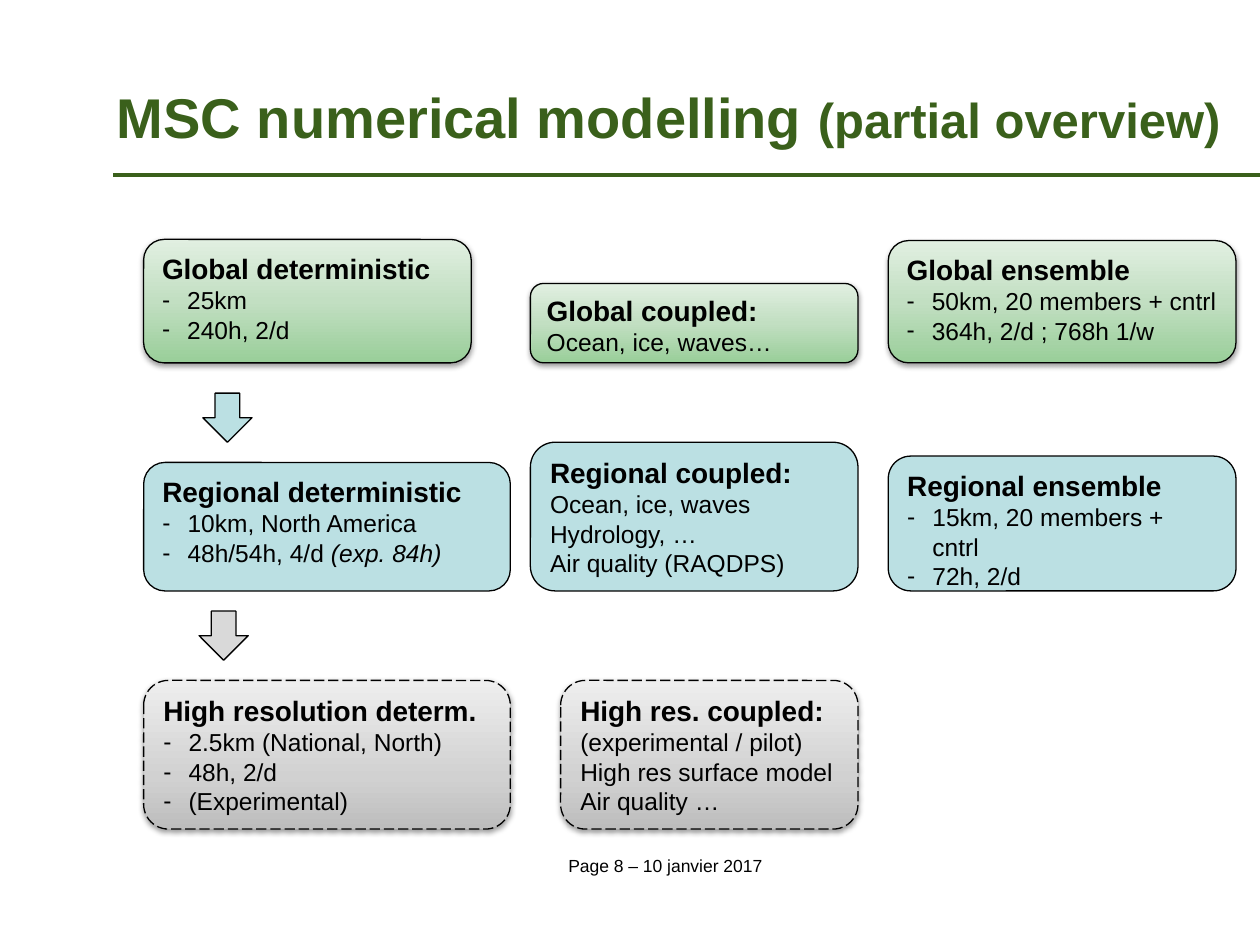
from pptx import Presentation
from pptx.dml.color import RGBColor as RGB
from pptx.enum.dml import MSO_LINE
from pptx.enum.shapes import MSO_CONNECTOR, MSO_SHAPE
from pptx.enum.text import MSO_ANCHOR as ANCHOR, PP_ALIGN as ALIGN
from pptx.oxml import parse_xml
from pptx.oxml.ns import nsdecls, qn
from pptx.util import Inches, Pt

BLACK = RGB(0, 0, 0)
FOREST = RGB(0x3A, 0x60, 0x1B)
BLUE = RGB(0xBB, 0xE0, 0xE3)
GREY = RGB(0xD9, 0xD9, 0xD9)
# Gradient stops run from the bottom edge to the top edge
GREENS = [(0, RGB(0x99, 0xCE, 0x99)), (50, RGB(0xC2, 0xDF, 0xC2)), (100, RGB(0xE1, 0xEF, 0xE1))]
GREYS = [(0, RGB(0xBD, 0xBD, 0xBD)), (35, RGB(0xD1, 0xD1, 0xD1)), (100, RGB(0xEE, 0xEE, 0xEE))]

# Grid of 100 columns by 75 rows
COLS, ROWS = 100, 75
DETERMINISTIC, COUPLED, ENSEMBLE = 11.4, 42.1, 70.5   # left edges
GLOBAL, REGIONAL, HIGH_RES = 28.8, 46.9, 65.8         # bottom edges


class Deck:
    font = "Arial"

    def __init__(self):
        self.prs = Presentation()
        self.prs.slide_width, self.prs.slide_height = Inches(10), Inches(7.5)
        self.s = self.prs.slides.add_slide(self.prs.slide_layouts[6])

    def at(self, x, y):
        return int(self.prs.slide_width * x / COLS), int(self.prs.slide_height * y / ROWS)

    def run(self, p, text, size, color=BLACK, bold=False, italic=False):
        r = p.add_run()
        r.text = text
        f = r.font
        f.name, f.size, f.bold, f.italic = self.font, Pt(size), bold, italic
        f.color.rgb = color

    def text(self, x, y, w, h, runs, align=ALIGN.LEFT, anchor=ANCHOR.TOP):
        tf = self.s.shapes.add_textbox(*self.at(x, y), *self.at(w, h)).text_frame
        tf.word_wrap, tf.vertical_anchor = True, anchor
        p = tf.paragraphs[0]
        p.alignment = align
        for text, size, color, bold in runs:
            self.run(p, text, size, color, bold)

    def rule(self, x1, x2, y):
        c = self.s.shapes.add_connector(MSO_CONNECTOR.STRAIGHT, *self.at(x1, y), *self.at(x2, y))
        c.line.color.rgb, c.line.width = FOREST, Pt(2.25)
        c._element.spPr.append(parse_xml(f'<a:effectLst {nsdecls("a")}/>'))

    def shape(self, kind, x, y, w, h, fill):
        sp = self.s.shapes.add_shape(kind, *self.at(x, y), *self.at(w, h))
        sp.shadow.inherit = False
        if isinstance(fill, list):
            self.gradient(sp, fill)
        else:
            sp.fill.solid()
            sp.fill.fore_color.rgb = fill
        sp.line.color.rgb, sp.line.width = BLACK, Pt(0.75)
        return sp

    def gradient(self, sp, stops):
        """Fill with a vertical gradient and drop a soft shadow below."""
        sp.fill.gradient()
        sp.fill.gradient_angle = 90
        spPr = sp._element.spPr
        gs = "".join(f'<a:gs pos="{pos * 1000}"><a:srgbClr val="{c}"/></a:gs>' for pos, c in stops)
        old = spPr.find(qn("a:gradFill")).find(qn("a:gsLst"))
        old.getparent().replace(old, parse_xml(f'<a:gsLst {nsdecls("a")}>{gs}</a:gsLst>'))
        spPr.find(qn("a:effectLst")).append(parse_xml(
            f'<a:outerShdw {nsdecls("a")} blurRad="40000" dist="20000" dir="5400000" rotWithShape="0">'
            '<a:srgbClr val="000000"><a:alpha val="38000"/></a:srgbClr></a:outerShdw>'))

    def box(self, x, bottom, w, h, fill, heading, lines, bullets=False, dashed=False):
        sp = self.shape(MSO_SHAPE.ROUNDED_RECTANGLE, x, bottom - h, w, h, fill)
        if dashed:
            sp.line.dash_style = MSO_LINE.LONG_DASH
        tf = sp.text_frame
        tf.word_wrap, tf.vertical_anchor = True, ANCHOR.TOP
        p = tf.paragraphs[0]
        p.alignment = ALIGN.LEFT
        self.run(p, heading, 16, bold=True)
        for line in lines:
            p = tf.add_paragraph()
            p.alignment = ALIGN.LEFT
            if bullets:
                self.dash(p)
            plain, _, note = line.partition("|")
            self.run(p, plain, 14)
            if note:
                self.run(p, note, 14, italic=True)

    def dash(self, p):
        pPr = p._p.get_or_add_pPr()
        pPr.set("marL", str(Inches(0.2)))
        pPr.set("indent", str(-Inches(0.2)))
        pPr.append(parse_xml(f'<a:buFont {nsdecls("a")} typeface="{self.font}"/>'))
        pPr.append(parse_xml(f'<a:buChar {nsdecls("a")} char="-"/>'))

    def arrow(self, x, y, fill):
        self.shape(MSO_SHAPE.DOWN_ARROW, x, y, 3.9, 3.9, fill)


def main():
    d = Deck()

    # Title, rule and footer
    d.text(8.3, 3, 90.5, 12.5, [("MSC numerical modelling ", 32, FOREST, True),
                                ("(partial overview)", 28, FOREST, True)], anchor=ANCHOR.MIDDLE)
    d.rule(9, COLS, 13.9)
    d.text(8.3, 67.4, 89, 2.7, [("Page 8 – 10 janvier 2017", 10, BLACK, False)], ALIGN.CENTER)

    # Global models
    d.box(DETERMINISTIC, GLOBAL, 26, 9.8, GREENS, "Global deterministic",
          ["25km", "240h, 2/d"], bullets=True)
    d.box(COUPLED, GLOBAL, 26, 6.3, GREENS, "Global coupled:", ["Ocean, ice, waves…"])
    d.box(ENSEMBLE, GLOBAL, 27.6, 9.7, GREENS, "Global ensemble",
          ["50km, 20 members + cntrl", "364h, 2/d ; 768h 1/w"], bullets=True)

    # Regional models
    d.box(DETERMINISTIC, REGIONAL, 29.1, 10.2, BLUE, "Regional deterministic",
          ["10km, North America", "48h/54h, 4/d |(exp. 84h)"], bullets=True)
    d.box(COUPLED, REGIONAL, 26, 11.8, BLUE, "Regional coupled:",
          ["Ocean, ice, waves Hydrology, …", "Air quality (RAQDPS)"])
    d.box(ENSEMBLE, REGIONAL, 27.6, 10.7, BLUE, "Regional ensemble",
          ["15km, 20 members + cntrl", "72h, 2/d"], bullets=True)

    # High resolution models
    d.box(DETERMINISTIC, HIGH_RES, 29.1, 11.8, GREYS, "High resolution determ.",
          ["2.5km (National, North)", "48h, 2/d", "(Experimental)"], bullets=True, dashed=True)
    d.box(COUPLED + 2.4, HIGH_RES, 23.6, 11.8, GREYS, "High res. coupled:",
          ["(experimental / pilot)", "High res surface model", "Air quality …"], dashed=True)

    # Arrows from each deterministic model to the next
    d.arrow(16.1, 31.2, BLUE)
    d.arrow(15.8, 48.5, GREY)

    d.prs.save("out.pptx")


if __name__ == "__main__":
    main()
